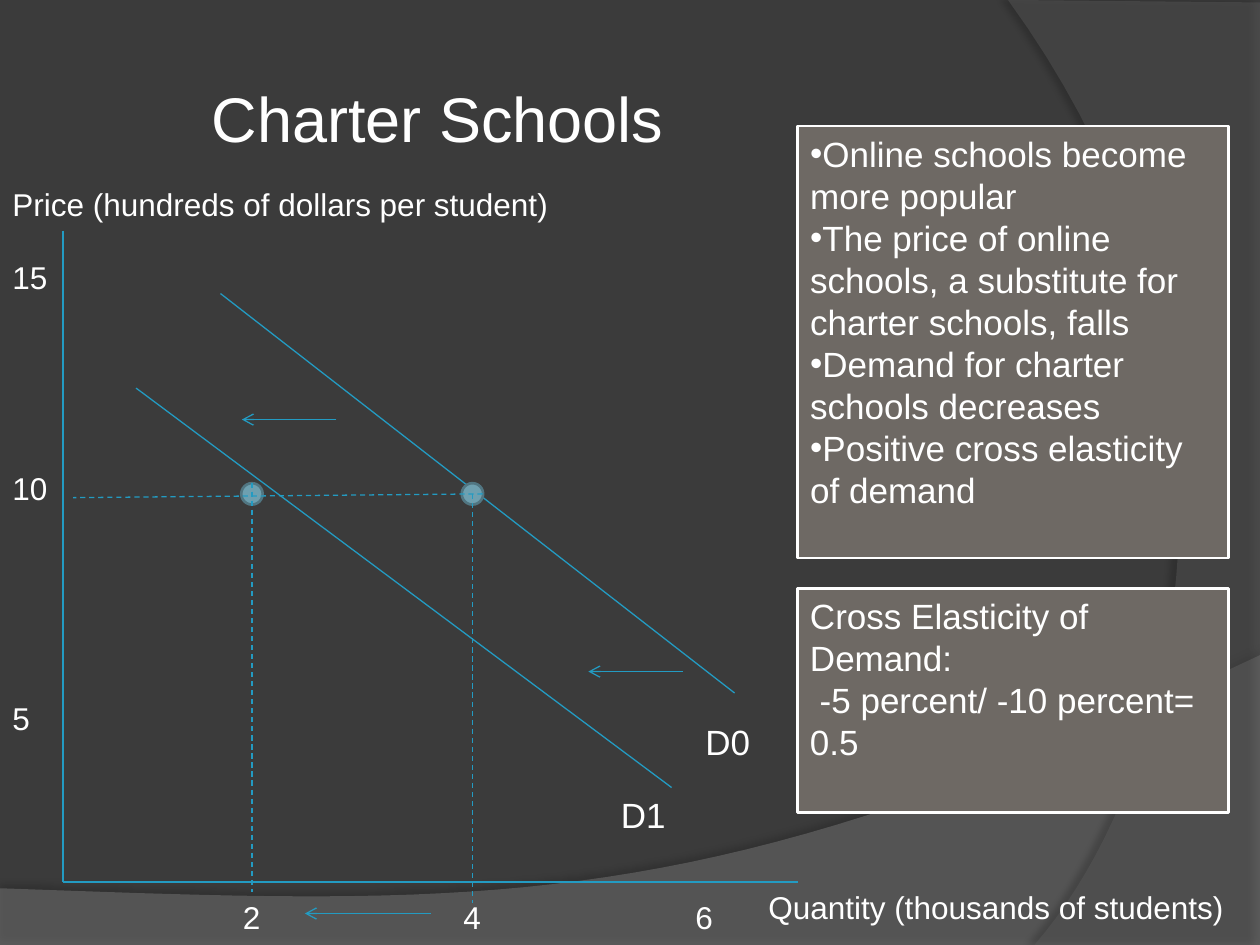
from lxml import etree
from pptx import Presentation
from pptx.dml.color import RGBColor
from pptx.enum.dml import MSO_LINE_DASH_STYLE as Dash
from pptx.enum.shapes import MSO_CONNECTOR, MSO_SHAPE
from pptx.enum.text import MSO_ANCHOR, MSO_AUTO_SIZE, PP_ALIGN
from pptx.oxml.ns import qn
from pptx.util import Inches, Pt

FONT = "Arial"
BACKGROUND = RGBColor(0x3B, 0x3B, 0x3B)
LOWER_BAND = RGBColor(0x7F, 0x7F, 0x7F)
RIGHT_BAND = RGBColor(0x5E, 0x5E, 0x5E)
WHITE = RGBColor(0xFF, 0xFF, 0xFF)
TEAL = RGBColor(0x23, 0x9B, 0xC2)
DOT_FILL = RGBColor(0x6E, 0xA0, 0xB0)
DOT_EDGE = RGBColor(0x51, 0x76, 0x82)
PANEL = RGBColor(0x6E, 0x69, 0x64)


def place(shape, box):
    shape.left, shape.top, shape.width, shape.height = map(Inches, box)


def write(shape, lines, size):
    """Fill a shape with left-aligned white paragraphs starting at its top."""
    frame = shape.text_frame
    frame.word_wrap = True
    frame.auto_size = MSO_AUTO_SIZE.NONE
    frame.vertical_anchor = MSO_ANCHOR.TOP
    frame.text = "\n".join(lines)
    for para in frame.paragraphs:
        para.alignment = PP_ALIGN.LEFT
        para.space_before = para.space_after = Pt(0)
        para.line_spacing = 1.0
        para.font.name, para.font.size = FONT, Pt(size)
        para.font.color.rgb = WHITE


def add_label(page, text, box, size=18):
    label = page.shapes.add_textbox(*map(Inches, box))
    write(label, [text], size)


def add_line(page, start, end, dashed=False, arrow=False):
    line = page.shapes.add_connector(
        MSO_CONNECTOR.STRAIGHT, *map(Inches, (*start, *end)))
    line.line.color.rgb = TEAL
    line.line.width = Pt(0.75)
    if dashed:
        line.line.dash_style = Dash.DASH
    if arrow:
        etree.SubElement(line.line._get_or_add_ln(), qn("a:tailEnd"), type="arrow")
    etree.SubElement(line._element.spPr, qn("a:effectLst"))


def curve(start, control1, control2, end, steps=40):
    """Points along a cubic Bezier curve."""
    points = []
    for step in range(steps + 1):
        t = step / steps
        weights = ((1 - t) ** 3, 3 * t * (1 - t) ** 2, 3 * t * t * (1 - t), t ** 3)
        corners = (start, control1, control2, end)
        points.append(tuple(sum(w * c[axis] for w, c in zip(weights, corners))
                            for axis in (0, 1)))
    return points


def add_band(page, points, color, opacity, shade, blur, distance, angle):
    """Translucent background shape with a soft shadow."""
    first, *rest = [(Inches(x), Inches(y)) for x, y in points]
    builder = page.shapes.build_freeform(*first)
    builder.add_line_segments(rest, close=True)
    band = builder.convert_to_shape()
    band.fill.solid()
    band.fill.fore_color.rgb = color
    band.line.fill.background()
    fill_color = band._element.spPr.find(".//" + qn("a:srgbClr"))
    etree.SubElement(fill_color, qn("a:alpha"), val=str(opacity * 1000))
    effects = etree.SubElement(band._element.spPr, qn("a:effectLst"))
    shadow = etree.SubElement(
        effects, qn("a:outerShdw"), blurRad=str(Pt(blur)), dist=str(Pt(distance)),
        dir=str(angle * 60000), algn="ctr", rotWithShape="0")
    black = etree.SubElement(shadow, qn("a:srgbClr"), val="000000")
    etree.SubElement(black, qn("a:alpha"), val=str(shade * 1000))
    return band


def draw_backdrop(page, width, height):
    page.background.fill.solid()
    page.background.fill.fore_color.rgb = BACKGROUND
    lower_edge = curve((width, 5.2), (5.59, 7.29), (3.91, 7.19), (0, 7.05))
    right_edge = curve((8.21, height), (9.35, 6.19), (10.18, 3), (8, 0))
    bands = (
        add_band(page, [(0, height), (width, height)] + lower_edge,
                 LOWER_BAND, 45, 35, 4, 3.5, 270),
        add_band(page, [(width, 0.02), (width, height)] + right_edge,
                 RIGHT_BAND, 40, 45, 4, 4, 180),
    )
    for index, band in enumerate(bands, start=2):
        page.shapes._spTree.insert(index, band._element)


def draw_title(page, box):
    title = page.shapes.title
    place(title, box)
    write(title, ["Charter Schools"], 36)


def add_dot(page, center, size=0.17):
    x, y = center
    dot = page.shapes.add_shape(
        MSO_SHAPE.OVAL, *map(Inches, (x - size / 2, y - size / 2, size, size)))
    dot.shadow.inherit = False
    dot.fill.solid()
    dot.fill.fore_color.rgb = DOT_FILL
    dot.line.color.rgb = DOT_EDGE
    dot.line.width = Pt(1.5)


def draw_demand_graph(page, box):
    left, top, width, height = box

    def at(x, y):
        return left + x, top + y

    origin = at(0.5, height)
    add_line(page, at(0.5, 0.41), origin)
    add_line(page, origin, at(width, height))
    add_line(page, at(1.75, 0.91), at(5.83, 4.08))
    add_line(page, at(1.08, 1.66), at(5.33, 4.83))

    for x in (3.75, 2):
        add_dot(page, at(x, 2.5))
    for x, y in ((2.67, 1.91), (5.42, 3.91)):
        add_line(page, at(x, y), at(x - 0.75, y), arrow=True)
    add_line(page, at(3.42, 5.83), at(2.42, 5.83), arrow=True)
    for x, y in ((3.75, 2.5), (2, 2.41)):
        add_line(page, at(x, y), at(x, y + 3.25), dashed=True)
    add_line(page, at(3.83, 2.5), at(0.58, 2.53), dashed=True)

    add_label(page, "Price (hundreds of dollars per student)", (*at(0, 0), 4.92, 0.4))
    add_label(page, "Quantity (thousands of students)", (*at(6, height), 4, 0.4))
    for text, x, y in (("D0", 5.5, 4.25), ("D1", 4.83, 4.83)):
        add_label(page, text, (*at(x, y), 0.67, 0.44), 20)
    for text, y in (("15", 0.58), ("10", 2.25), ("5", 4.08)):
        add_label(page, text, (*at(0, y), 0.58, 0.4))
    for text, x in (("2", 1.83), ("4", 3.58), ("6", 5.42)):
        add_label(page, text, (*at(x, 5.66), 0.4, 0.42))


def style_panel(panel, lines):
    panel.fill.solid()
    panel.fill.fore_color.rgb = PANEL
    panel.line.color.rgb = WHITE
    panel.line.width = Pt(1.5)
    write(panel, lines, 20)


def draw_reasons(page, box):
    panel = page.placeholders[1]
    place(panel, box)
    style_panel(panel, [
        "Online schools become more popular",
        "The price of online schools, a substitute for charter schools, falls",
        "Demand for charter schools decreases",
        "Positive cross elasticity of demand",
    ])
    for para in panel.text_frame.paragraphs:
        props = para._p.get_or_add_pPr()
        props.set("marL", "0")
        props.set("indent", "0")
        bullet = etree.Element(qn("a:buChar"), char="•")
        props.find(qn("a:defRPr")).addprevious(bullet)


def draw_elasticity(page, box):
    panel = page.shapes.add_shape(MSO_SHAPE.RECTANGLE, *map(Inches, box))
    panel.shadow.inherit = False
    style_panel(panel, ["Cross Elasticity of Demand:", " -5 percent/ -10 percent= 0.5"])


def main():
    deck = Presentation()
    deck.slide_width, deck.slide_height = Inches(10), Inches(7.5)
    page = deck.slides.add_slide(deck.slide_layouts[1])
    draw_backdrop(page, 10, 7.5)
    draw_title(page, (1.58, 0.58, 4.33, 0.71))
    draw_demand_graph(page, (0, 1.42, 6.33, 5.58))
    draw_reasons(page, (6.33, 1, 3.42, 3.43))
    draw_elasticity(page, (6.33, 4.67, 3.42, 1.78))
    deck.save("out.pptx")


if __name__ == "__main__":
    main()
